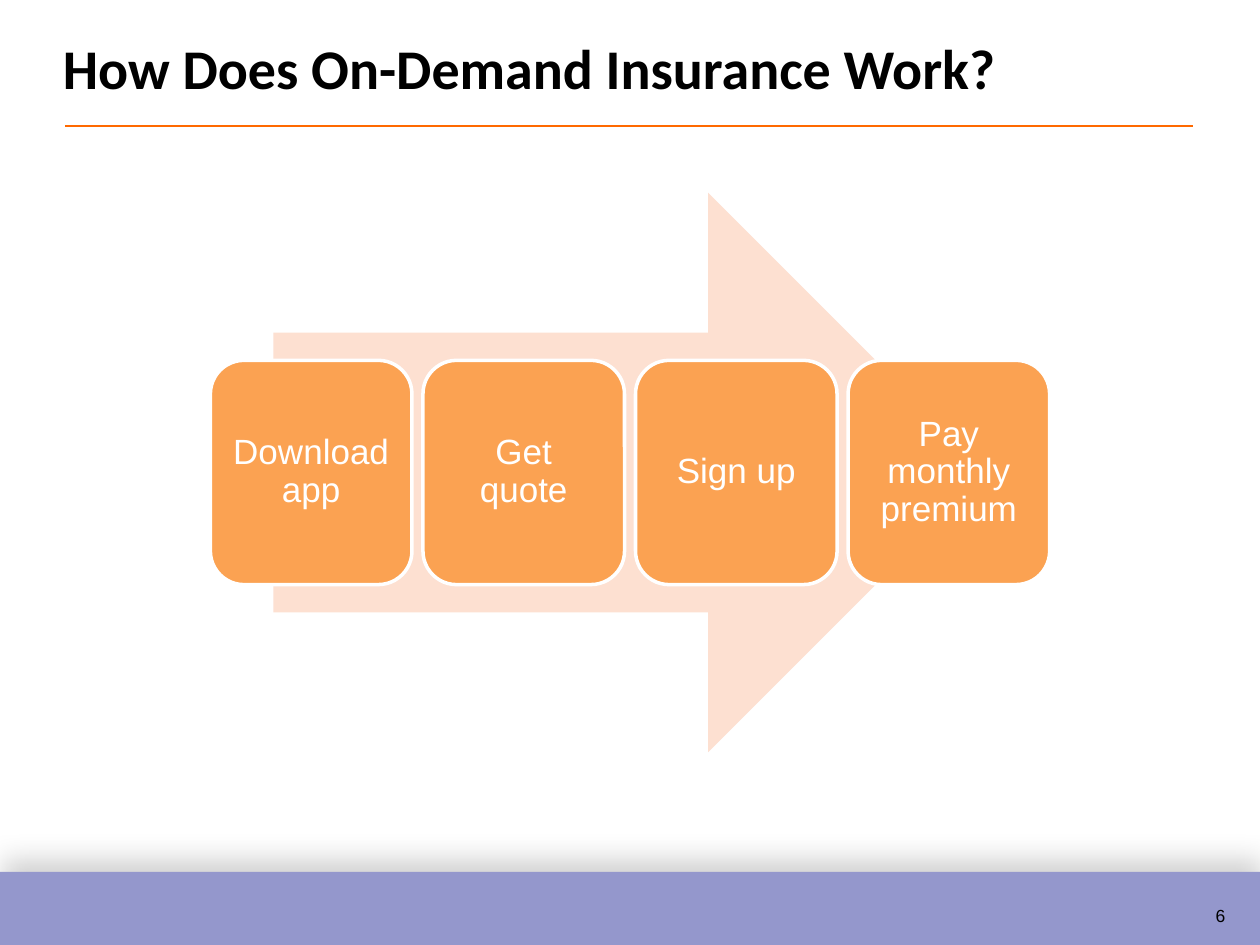
from lxml.etree import SubElement
from pptx import Presentation
from pptx.dml.color import RGBColor
from pptx.enum.shapes import MSO_CONNECTOR, MSO_SHAPE
from pptx.enum.text import MSO_ANCHOR, PP_ALIGN
from pptx.oxml.ns import qn
from pptx.util import Inches, Pt

BLACK = RGBColor(0x00, 0x00, 0x00)
WHITE = RGBColor(0xFF, 0xFF, 0xFF)
LAVENDER = RGBColor(0x94, 0x97, 0xCC)
RULE = RGBColor(0xFF, 0x69, 0x00)
PEACH = RGBColor(0xFD, 0xE0, 0xD1)
ORANGE = RGBColor(0xFB, 0xA2, 0x52)

COLS, ROWS = 100, 75
STEPS = ["Download app", "Get\nquote", "Sign up", "Pay monthly premium"]
STEP_LEFT, STEP_PITCH, STEP_WIDTH = 16.7, 16.87, 16


class Deck:
    """Draws styled elements on the current slide, placed in grid columns and rows."""

    def __init__(self, prs):
        self.prs = prs
        self.s = prs.slides.add_slide(prs.slide_layouts[6])

    def grid(self, *lengths):
        units = self.prs.slide_width / COLS, self.prs.slide_height / ROWS
        return [round(v * units[i % 2]) for i, v in enumerate(lengths)]

    def shape(self, kind, at, fill, line=None):
        sp = self.s.shapes.add_shape(kind, *self.grid(*at))
        sp.shadow.inherit = False
        sp.fill.solid()
        sp.fill.fore_color.rgb = fill
        if line is None:
            sp.line.fill.background()
        else:
            sp.line.color.rgb = line
            sp.line.width = Pt(2)
        return sp

    def band(self, at, fill):
        sp = self.shape(MSO_SHAPE.RECTANGLE, at, fill)
        effects = sp._element.spPr.find(qn("a:effectLst"))
        shadow = SubElement(effects, qn("a:outerShdw"), blurRad=str(Pt(16)),
                            dist=str(Pt(8)), dir=str(277 * 60000), rotWithShape="0")
        color = SubElement(shadow, qn("a:srgbClr"), val=str(BLACK))
        SubElement(color, qn("a:alpha"), val="19000")

    def rule(self, ends, color):
        cn = self.s.shapes.add_connector(MSO_CONNECTOR.STRAIGHT, *self.grid(*ends))
        cn.line.color.rgb = color
        cn.line.width = Pt(1)
        SubElement(cn._element.spPr, qn("a:effectLst"))

    def fill_text(self, tf, text, size, color, font="Arial", bold=False, spacing=1.0):
        p = tf.paragraphs[0]
        p.line_spacing = spacing
        for i, part in enumerate(text.split("\n")):
            if i:
                p.add_line_break()
            r = p.add_run()
            r.text = part
            r.font.name, r.font.size, r.font.bold = font, Pt(size), bold
            r.font.color.rgb = color
        return p

    def text(self, at, text, size, wrap=True, **style):
        tf = self.s.shapes.add_textbox(*self.grid(*at)).text_frame
        tf.word_wrap = wrap
        self.fill_text(tf, text, size, BLACK, **style)

    def step(self, at, text):
        tf = self.shape(MSO_SHAPE.ROUNDED_RECTANGLE, at, ORANGE, WHITE).text_frame
        tf.word_wrap = True
        tf.vertical_anchor = MSO_ANCHOR.MIDDLE
        tf.margin_left = tf.margin_right = Inches(0.08)
        tf.margin_top = tf.margin_bottom = Inches(0.08)
        p = self.fill_text(tf, text, 20, WHITE, spacing=0.9)
        p.alignment = PP_ALIGN.CENTER


def main():
    prs = Presentation()
    prs.slide_width, prs.slide_height = Inches(10), Inches(7.5)
    deck = Deck(prs)
    deck.band((0, 69.2, COLS, 5.8), LAVENDER)
    deck.text((95.5, 70.5, 3.7, 3.4), "6", 10, wrap=False, spacing=1.5)
    deck.rule((5.2, 10, 94.7, 10), RULE)
    deck.text((4, 2.2, 91.5, 6.4), "How Does On-Demand Insurance Work?", 32,
              font="Calibri", bold=True)
    deck.shape(MSO_SHAPE.RIGHT_ARROW, (21.7, 15.3, 56.7, 44.4), PEACH)
    for i, label in enumerate(STEPS):
        deck.step((STEP_LEFT + i * STEP_PITCH, 28.6, STEP_WIDTH, 17.8), label)
    prs.save("out.pptx")


if __name__ == "__main__":
    main()
